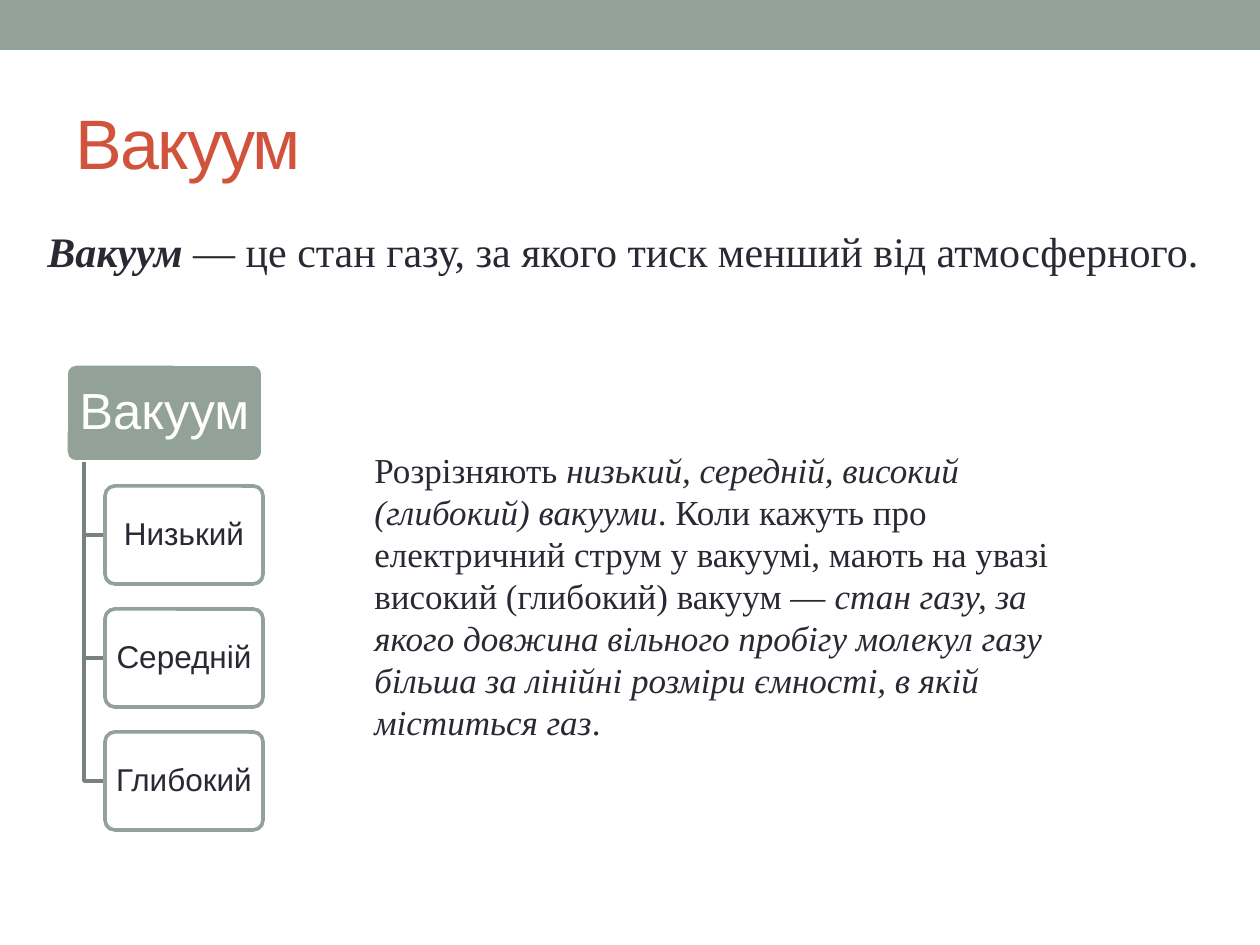
import pptx
import pptx.util
import pptx.dml.color
import pptx.enum.shapes
import pptx.enum.text
import pptx.oxml
import pptx.oxml.ns

PX = 914400 / 126
COLORS = {"sage": "93A299", "branch": "76827B", "rust": "D2533C",
          "ink": "292934", "white": "FFFFFF"}
SHAPE = pptx.enum.shapes.MSO_SHAPE
ALIGN = pptx.enum.text.PP_ALIGN
ANCHOR = pptx.enum.text.MSO_ANCHOR


def rgb(name):
    return pptx.dml.color.RGBColor.from_string(COLORS[name])


def box(shapes, kind, rect, fill, line):
    """Add a preset shape with a flat fill and an optional outline."""
    s = shapes.add_shape(kind, *[round(v * PX) for v in rect])
    s.shadow.inherit = False
    s.fill.solid()
    s.fill.fore_color.rgb = rgb(fill)
    if line:
        s.line.color.rgb = rgb(line)
        s.line.width = pptx.util.Pt(2.08)
    else:
        s.line.fill.background()
    return s


prs = pptx.Presentation()
prs.slide_width = round(1260 * PX)
prs.slide_height = round(945 * PX)
slide = prs.slides.add_slide(prs.slide_layouts[5])
shapes = slide.shapes

box(shapes, SHAPE.RECTANGLE, (0, 0, 1260, 50), "sage", None)

# Title
title = shapes.title
title.left, title.top, title.width, title.height = [
    round(v * PX) for v in (63, 73, 1134, 136)]
tf = title.text_frame
tf.text = "Вакуум"
tf.vertical_anchor = ANCHOR.MIDDLE
p = tf.paragraphs[0]
p.alignment = ALIGN.LEFT
r = p.runs[0]
r.font.name = "Arial"
r.font.size = pptx.util.Pt(40)
r.font.color.rgb = rgb("rust")
r.font._element.set("spc", "-100")

# Definition and explanation: (text, bold, italic) runs
passages = [
    ((35, 219, 1197, 158), 24, [
        ("Вакуум", True, True),
        (" — це стан газу, за якого тиск менший від атмосферного.", False, False)]),
    ((362, 442, 724, 310), 20, [
        ("Розрізняють ", False, False),
        ("низький, середній, високий (глибокий) вакууми", False, True),
        (". Коли кажуть про електричний струм у вакуумі, мають на увазі "
         "високий (глибокий) вакуум — ", False, False),
        ("стан газу, за якого довжина вільного пробігу молекул газу більша "
         "за лінійні розміри ємності, в якій міститься газ", False, True),
        (".", False, False)]),
]
for rect, size, runs in passages:
    tf = shapes.add_textbox(*[round(v * PX) for v in rect]).text_frame
    tf.word_wrap = True
    for text, bold, italic in runs:
        r = tf.paragraphs[0].add_run()
        r.text = text
        r.font.name = "Times New Roman"
        r.font.size = pptx.util.Pt(size)
        r.font.bold, r.font.italic = bold, italic
        r.font.color.rgb = rgb("ink")

# Hierarchy: one root with the kinds of vacuum hanging from a spine
ROOT = (66, 364, 197, 98)
CHILD_X, CHILD_Y, CHILD_W, CHILD_H, PITCH = 105, 486, 158, 98, 123
SPINE_X, SPINE_Y = 84, 462

nodes = [("Вакуум", ROOT, 29, "sage", "white", "white")]
for i, kind in enumerate(["Низький", "Середній", "Глибокий"]):
    rect = (CHILD_X, CHILD_Y + i * PITCH, CHILD_W, CHILD_H)
    nodes.append((kind, rect, 18, "white", "sage", "ink"))

for text, rect, size, fill, line, ink in nodes:
    if rect != ROOT:
        middle = rect[1] + CHILD_H // 2
        path = shapes.build_freeform(SPINE_X, SPINE_Y, scale=PX)
        path.add_line_segments([(SPINE_X, middle), (CHILD_X, middle)], close=False)
        s = path.convert_to_shape()
        s.shadow.inherit = False
        s.fill.background()
        s.line.color.rgb = rgb("branch")
        s.line.width = pptx.util.Pt(2.08)

    s = box(shapes, SHAPE.ROUNDED_RECTANGLE, rect, fill, line)
    s.adjustments[0] = 0.1
    if rect != ROOT:
        color = s.fill._xPr.find(".//" + pptx.oxml.ns.qn("a:srgbClr"))
        color.append(pptx.oxml.parse_xml(
            '<a:alpha %s val="90000"/>' % pptx.oxml.ns.nsdecls("a")))
    tf = s.text_frame
    tf.word_wrap = True
    tf.vertical_anchor = ANCHOR.MIDDLE
    tf.margin_left = tf.margin_right = round(8 * PX)
    tf.margin_top = tf.margin_bottom = round(6 * PX)
    tf.text = text
    p = tf.paragraphs[0]
    p.alignment = ALIGN.CENTER
    p.line_spacing = 0.9
    r = p.runs[0]
    r.font.name = "Arial"
    r.font.size = pptx.util.Pt(size)
    r.font.color.rgb = rgb(ink)

prs.save("out.pptx")
